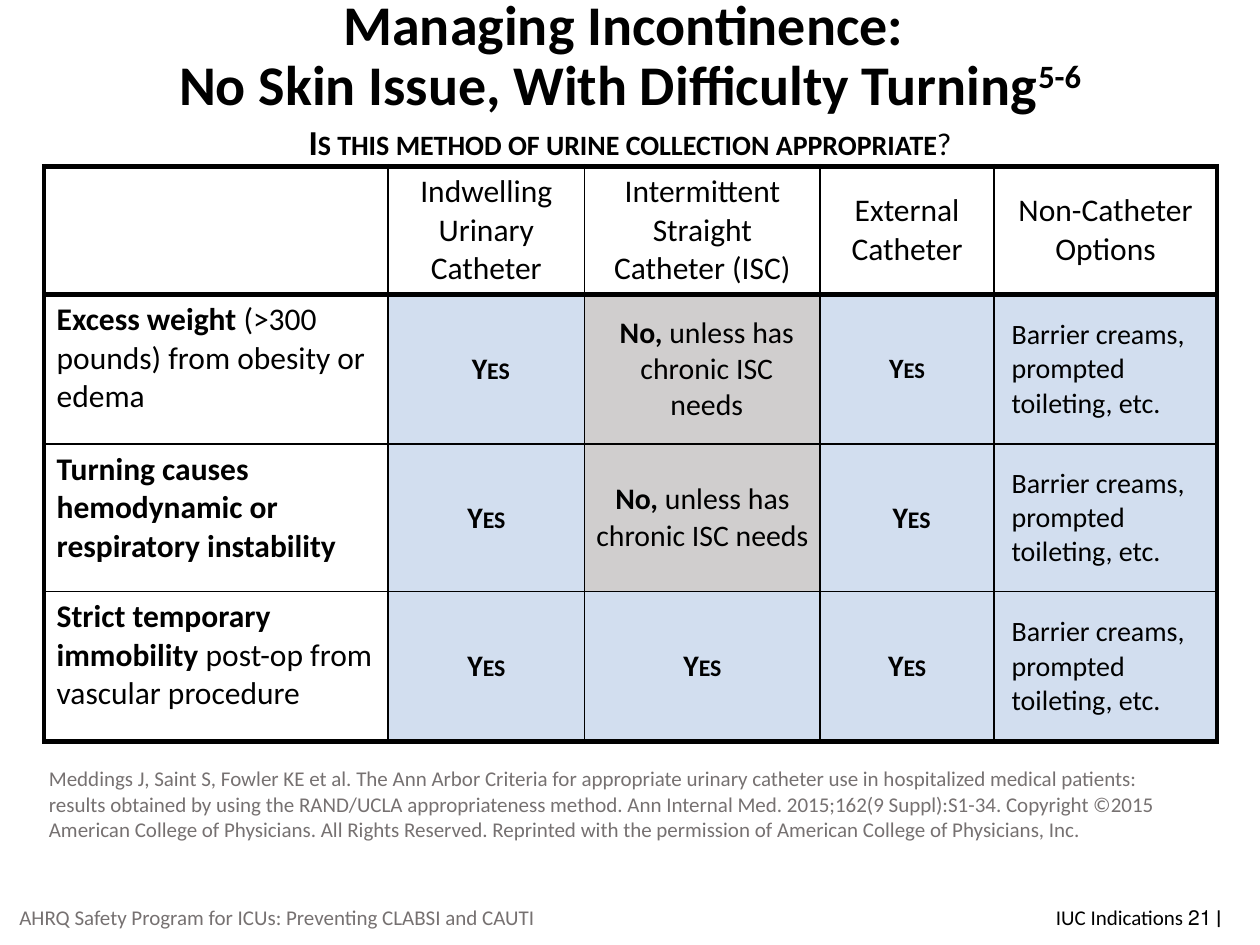
import dataclasses
import typing

import lxml.etree
import pptx
import pptx.dml.color
import pptx.enum.text
import pptx.oxml.ns
import pptx.util

Inches = pptx.util.Inches
Align = pptx.enum.text.PP_ALIGN
Anchor = pptx.enum.text.MSO_ANCHOR

BLACK = pptx.dml.color.RGBColor(0x00, 0x00, 0x00)
GRAY = pptx.dml.color.RGBColor(0x76, 0x71, 0x71)
BLUE = pptx.dml.color.RGBColor(0xD2, 0xDE, 0xEF)
SILVER = pptx.dml.color.RGBColor(0xD0, 0xCE, 0xCE)

COLUMN_WIDTHS = [2.73, 1.56, 1.87, 1.38, 1.77]
ROW_HEIGHTS = [0.99, 1.19, 1.17, 1.19]
THICK, THIN = 3, 1


@dataclasses.dataclass(frozen=True)
class Span:
    text: str
    bold: bool = False
    small_caps: bool = False
    size: typing.Optional[float] = None
    font: str = "Calibri"
    superscript: bool = False


@dataclasses.dataclass(frozen=True)
class Entry:
    spans: tuple[Span, ...]
    size: float = 18
    align: Align = Align.CENTER
    anchor: Anchor = Anchor.MIDDLE
    indent: float = 0
    fill: typing.Optional[pptx.dml.color.RGBColor] = None


@dataclasses.dataclass(frozen=True)
class Note:
    left: float
    top: float
    width: float
    height: float
    spans: tuple[Span, ...]
    size: float = 12
    color: pptx.dml.color.RGBColor = GRAY
    align: Align = Align.LEFT
    anchor: Anchor = Anchor.TOP


def heading(text: str) -> Entry:
    return Entry((Span(text),))


def condition(*spans: Span) -> Entry:
    return Entry(spans, align=Align.LEFT, anchor=Anchor.TOP)


def yes(size: float = 17, indent: float = 0) -> Entry:
    return Entry((Span("Yes", bold=True, small_caps=True),), size, indent=indent, fill=BLUE)


def no(indent: float = 0) -> Entry:
    spans = (Span("No, ", bold=True), Span("unless has chronic ISC needs"))
    return Entry(spans, 17, indent=indent, fill=SILVER)


def options() -> Entry:
    spans = (Span("Barrier creams, prompted toileting, etc."),)
    return Entry(spans, 16, Align.LEFT, indent=0.07, fill=BLUE)


ENTRIES = [
    [
        heading(""),
        heading("Indwelling Urinary Catheter"),
        heading("Intermittent Straight Catheter (ISC)"),
        heading("External Catheter"),
        heading("Non-Catheter Options"),
    ],
    [
        condition(Span("Excess weight ", bold=True), Span("(>300 pounds) from obesity or edema")),
        yes(indent=0.07), no(indent=0.07), yes(size=16), options(),
    ],
    [
        condition(Span("Turning causes hemodynamic or respiratory instability", bold=True)),
        yes(), no(), yes(indent=0.07), options(),
    ],
    [
        condition(Span("Strict temporary immobility", bold=True), Span(" post-op from vascular procedure")),
        yes(), yes(), yes(), options(),
    ],
]

NOTES = [
    Note(1.74, 0.91, 6.52, 0.44, (
        Span("Is this method of urine collection appropriate", bold=True, small_caps=True, size=20),
        Span("?"),
    ), size=18, color=BLACK, align=Align.CENTER),
    Note(0.29, 6.03, 9.3, 0.71, (Span(
        "Meddings J, Saint S, Fowler KE et al. The Ann Arbor Criteria for appropriate urinary "
        "catheter use in hospitalized medical patients: results obtained by using the RAND/UCLA "
        "appropriateness method. Ann Internal Med. 2015;162(9 Suppl):S1-34. Copyright ©2015 "
        "American College of Physicians. All Rights Reserved. Reprinted with the permission of "
        "American College of Physicians, Inc."),)),
    Note(0, 7.08, 4.4, 0.4, (Span("AHRQ Safety Program for ICUs: Preventing CLABSI and CAUTI"),),
         align=Align.CENTER, anchor=Anchor.MIDDLE),
    Note(7.54, 7.08, 2.25, 0.4, (Span("IUC Indications "), Span("׀ ", font="Lato"), Span("21")),
         color=BLACK, align=Align.RIGHT, anchor=Anchor.MIDDLE),
]


def write(para, spans: tuple[Span, ...], *, size: float, align: Align,
          color: pptx.dml.color.RGBColor = BLACK) -> None:
    para.alignment = align
    for span in spans:
        run = para.add_run()
        run.text = span.text
        run.font.name = span.font
        run.font.size = pptx.util.Pt(span.size or size)
        run.font.bold = span.bold
        run.font.color.rgb = color
        properties = run._r.get_or_add_rPr()
        if span.small_caps:
            properties.set("cap", "small")
        if span.superscript:
            properties.set("baseline", "30000")


def add_title(page) -> None:
    title = page.shapes.title
    title.left, title.top = Inches(0.69), Inches(0.01)
    title.width, title.height = Inches(8.62), Inches(0.89)
    frame = title.text_frame
    frame.word_wrap = True
    frame.auto_size = pptx.enum.text.MSO_AUTO_SIZE.NONE
    frame.vertical_anchor = Anchor.MIDDLE
    para = frame.paragraphs[0]
    para.line_spacing = 0.9
    write(para, (Span("Managing Incontinence: ", bold=True),), size=32, align=Align.CENTER)
    para.add_line_break()
    write(para, (
        Span("No Skin Issue, With Difficulty Turning", bold=True),
        Span("5-6", bold=True, superscript=True),
    ), size=32, align=Align.CENTER)


def add_note(page, note: Note) -> None:
    box = page.shapes.add_textbox(
        Inches(note.left), Inches(note.top), Inches(note.width), Inches(note.height))
    frame = box.text_frame
    frame.word_wrap = True
    frame.vertical_anchor = note.anchor
    write(frame.paragraphs[0], note.spans, size=note.size, align=note.align, color=note.color)


def set_borders(cell, widths: dict[str, int]) -> None:
    properties = cell._tc.get_or_add_tcPr()
    qn = pptx.oxml.ns.qn
    for side, width in widths.items():
        line = lxml.etree.SubElement(properties, qn(f"a:ln{side}"), w=str(pptx.util.Pt(width)))
        paint = lxml.etree.SubElement(line, qn("a:solidFill"))
        lxml.etree.SubElement(paint, qn("a:srgbClr"), val=str(BLACK))


def fill_cell(cell, entry: Entry) -> None:
    cell.vertical_anchor = entry.anchor
    if entry.fill is None:
        cell.fill.background()
    else:
        cell.fill.solid()
        cell.fill.fore_color.rgb = entry.fill
        cell.margin_left = cell.margin_right = Inches(0.07)
        cell.margin_top = cell.margin_bottom = 0
    para = cell.text_frame.paragraphs[0]
    if entry.indent:
        properties = para._p.get_or_add_pPr()
        properties.set("marL", str(Inches(entry.indent)))
        properties.set("indent", "0")
    write(para, entry.spans, size=entry.size, align=entry.align)


def add_criteria_table(page) -> None:
    last_row, last_column = len(ROW_HEIGHTS) - 1, len(COLUMN_WIDTHS) - 1
    table = page.shapes.add_table(
        len(ROW_HEIGHTS), len(COLUMN_WIDTHS), Inches(0.35), Inches(1.32),
        Inches(sum(COLUMN_WIDTHS)), Inches(sum(ROW_HEIGHTS))).table
    table.first_row = table.horz_banding = False
    for column, width in zip(table.columns, COLUMN_WIDTHS):
        column.width = Inches(width)
    for row, height in zip(table.rows, ROW_HEIGHTS):
        row.height = Inches(height)
    for r, entries in enumerate(ENTRIES):
        for c, entry in enumerate(entries):
            cell = table.cell(r, c)
            set_borders(cell, {
                "L": THICK if c == 0 else THIN,
                "R": THICK if c == last_column else THIN,
                "T": THICK if r <= 1 else THIN,
                "B": THICK if r in (0, last_row) else THIN,
            })
            fill_cell(cell, entry)


def main() -> None:
    deck = pptx.Presentation()
    deck.slide_width, deck.slide_height = Inches(10), Inches(7.5)
    page = deck.slides.add_slide(deck.slide_layouts[5])
    add_title(page)
    add_criteria_table(page)
    for note in NOTES:
        add_note(page, note)
    deck.save("out.pptx")


if __name__ == "__main__":
    main()
